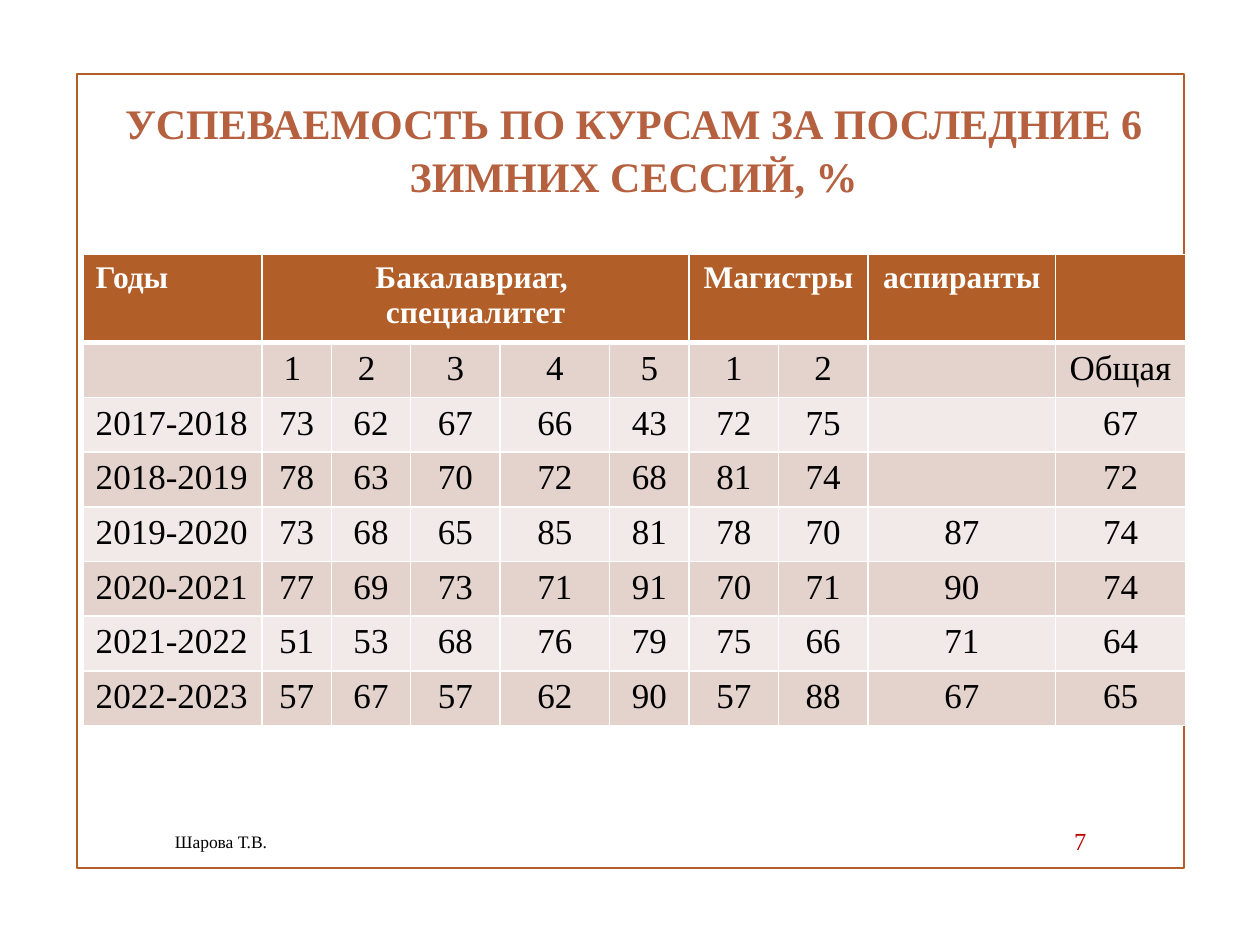
from dataclasses import dataclass

from lxml import etree
from pptx import Presentation
from pptx import util as u
from pptx.dml.color import RGBColor
from pptx.enum import shapes, text
from pptx.oxml import ns

COLORS = {
    "accent": "B15E28", "title": "B5603F", "page": "C00000", "white": "FFFFFF",
    "black": "000000", "dark_band": "E4D2CD", "light_band": "F2EAE8",
}
FONT = "Times New Roman"
LEFT, CENTER, RIGHT = text.PP_ALIGN.LEFT, text.PP_ALIGN.CENTER, text.PP_ALIGN.RIGHT


@dataclass
class Label:
    words: str
    box: tuple
    size: int
    color: str
    align: text.PP_ALIGN


LABELS = [
    Label("7", (8.29, 6.52, 0.43, 0.31), 14, "page", RIGHT),
    Label("Шарова Т.В.", (1.29, 6.52, 5.58, 0.31), 10, "black", LEFT),
]

COL_WIDTHS = [1.42, 0.55, 0.63, 0.71, 0.87, 0.63, 0.71, 0.71, 1.49, 1.03]
HEADER_HEIGHT, ROW_HEIGHT = 0.64, 0.43
HEADER_SPANS = [(1, 5), (6, 7)]
ROWS = [
    ["Годы", "Бакалавриат, \nспециалитет", "", "", "", "", "Магистры", "", "аспиранты", ""],
    ["", "1 ", "2 ", "3", "4", "5", "1", "2", "", "Общая"],
    ["2017-2018", 73, 62, 67, 66, 43, 72, 75, "", 67],
    ["2018-2019", 78, 63, 70, 72, 68, 81, 74, "", 72],
    ["2019-2020", 73, 68, 65, 85, 81, 78, 70, 87, 74],
    ["2020-2021", 77, 69, 73, 71, 91, 70, 71, 90, 74],
    ["2021-2022", 51, 53, 68, 76, 79, 75, 66, 71, 64],
    ["2022-2023", 57, 67, 57, 62, 90, 57, 88, 67, 65],
]


def rgb(name: str) -> RGBColor:
    return RGBColor.from_string(COLORS[name])


def inches(values: tuple) -> list:
    return [u.Inches(v) for v in values]


def write(tf, words: str, size: int, color: str, align, bold: bool = False) -> None:
    """Fill a text frame, one paragraph per line, in one format."""
    tf.text = words
    for p in tf.paragraphs:
        p.alignment = align
        for r in p.runs:
            for name, value in {"name": FONT, "size": u.Pt(size), "bold": bold}.items():
                setattr(r.font, name, value)
            r.font.color.rgb = rgb(color)


def add_label(s, label: Label) -> None:
    tf = s.shapes.add_textbox(*inches(label.box)).text_frame
    tf.word_wrap = True
    tf.vertical_anchor = text.MSO_ANCHOR.MIDDLE
    write(tf, label.words, label.size, label.color, label.align)


def set_borders(cell, widths: dict) -> None:
    tc_pr = cell._tc.get_or_add_tcPr()
    for side, width in widths.items():
        ln = etree.SubElement(tc_pr, ns.qn(f"a:ln{side}"), w=str(u.Pt(width)))
        fill = etree.SubElement(ln, ns.qn("a:solidFill"))
        etree.SubElement(fill, ns.qn("a:srgbClr"), val=COLORS["white"])


def add_grades(s) -> None:
    height = HEADER_HEIGHT + ROW_HEIGHT * (len(ROWS) - 1)
    box = inches((0.66, 2.02, sum(COL_WIDTHS), height))
    table = s.shapes.add_table(len(ROWS), len(COL_WIDTHS), *box).table
    for column, width in zip(table.columns, COL_WIDTHS):
        column.width = u.Inches(width)

    for i, row in enumerate(ROWS):
        header = i == 0
        table.rows[i].height = u.Inches(HEADER_HEIGHT if header else ROW_HEIGHT)
        band = "accent" if header else "dark_band" if i % 2 else "light_band"
        for j, value in enumerate(row):
            cell = table.cell(i, j)
            set_borders(cell, {"L": 1, "R": 1, "T": 3 if i == 1 else 1, "B": 3 if header else 1})
            cell.fill.solid()
            cell.fill.fore_color.rgb = rgb(band)
            if value != "":
                write(cell.text_frame, str(value), 18 if header else 20,
                      "white" if header else "black", CENTER if j else LEFT, header)

    for first, last in HEADER_SPANS:
        table.cell(0, first).merge(table.cell(0, last))


def main() -> None:
    prs = Presentation()
    prs.slide_width, prs.slide_height = u.Inches(10), u.Inches(7.5)
    s = prs.slides.add_slide(prs.slide_layouts[5])

    # Frame around the slide
    frame = s.shapes.add_shape(shapes.MSO_SHAPE.RECTANGLE, *inches((0.61, 0.59, 8.79, 6.3)))
    frame.shadow.inherit = False
    frame.fill.background()
    frame.line.color.rgb = rgb("accent")
    frame.line.width = u.Pt(1.25)

    # Title
    title = s.shapes.title
    title.left, title.top, title.width, title.height = inches((0.53, 0.55, 9, 1.25))
    tf = title.text_frame
    tf.vertical_anchor = text.MSO_ANCHOR.MIDDLE
    write(tf, "УСПЕВАЕМОСТЬ ПО КУРСАМ ЗА ПОСЛЕДНИЕ 6 ЗИМНИХ СЕССИЙ, %", 24, "title", CENTER, True)
    tf.paragraphs[0].line_spacing = 1.05

    # Page number and author
    for label in LABELS:
        add_label(s, label)

    # Grades by year and course
    add_grades(s)
    prs.save("out.pptx")


if __name__ == "__main__":
    main()
